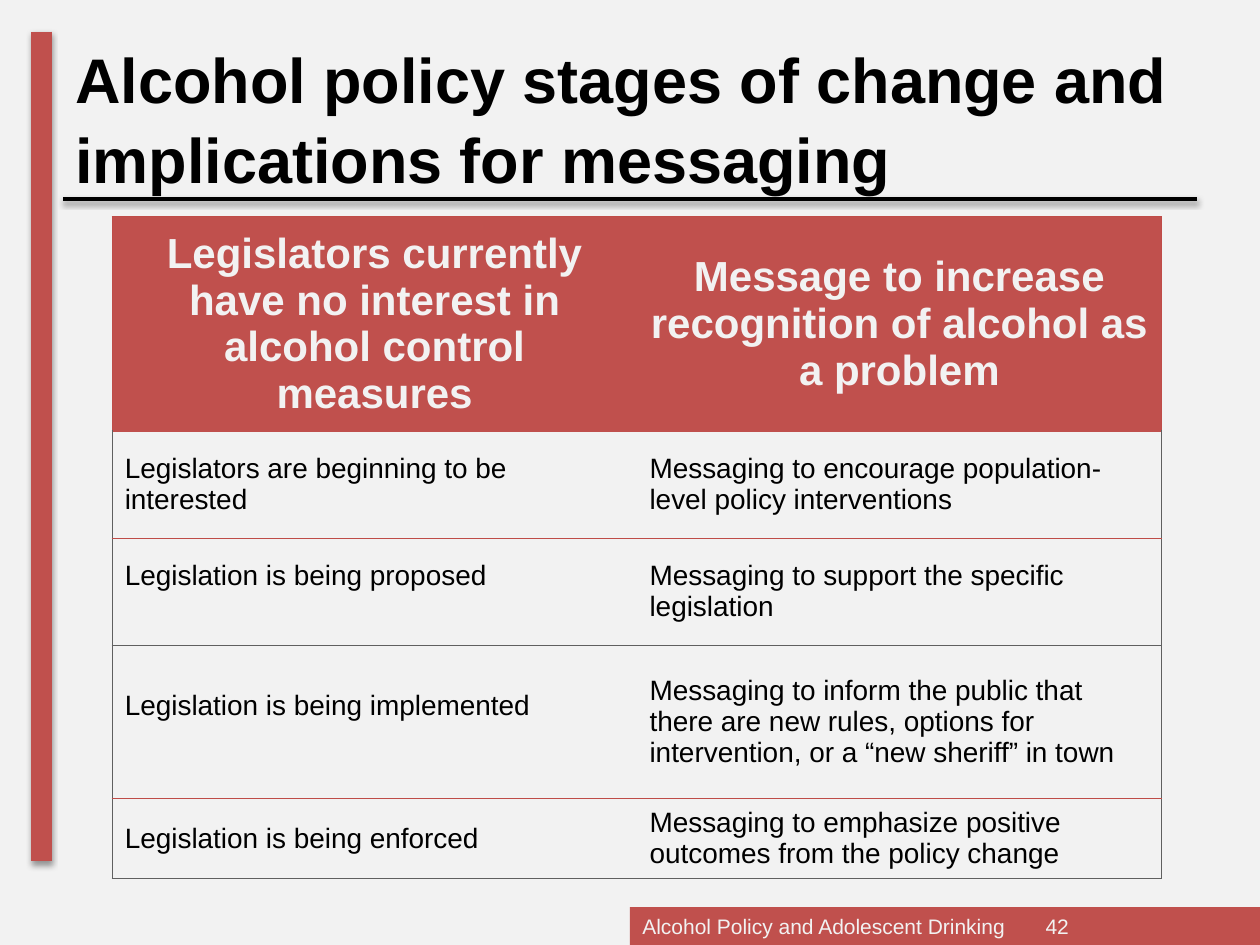
import pptx
import pptx.util
from pptx.dml.color import RGBColor
from pptx.enum.shapes import MSO_CONNECTOR, MSO_SHAPE
from pptx.enum.text import MSO_ANCHOR, PP_ALIGN
from pptx.oxml import parse_xml
from pptx.oxml.ns import nsdecls
from pptx.util import Inches, Pt

RED = RGBColor(0xC0, 0x50, 0x4D)
BORDER_RED = RGBColor(0xBF, 0x4C, 0x48)
GREY = RGBColor(0x60, 0x60, 0x60)
LIGHT = RGBColor(0xF2, 0xF2, 0xF2)
BLACK = RGBColor(0, 0, 0)
FONT = "Arial"

STAGES = [
    ("Legislators currently have no interest in alcohol control measures",
     "Message to increase recognition of alcohol as a problem"),
    ("Legislators are beginning to be interested",
     "Messaging to encourage population-level policy interventions"),
    ("Legislation is being proposed",
     "Messaging to support the specific legislation"),
    ("Legislation is being implemented",
     "Messaging to inform the public that there are new rules, options for "
     "intervention, or a “new sheriff” in town"),
    ("Legislation is being enforced",
     "Messaging to emphasize positive outcomes from the policy change"),
]
ROW_HEIGHTS = [0.83, 0.85, 0.85, 1.22, 0.49]
RULES_BELOW = [RED, BORDER_RED, GREY, BORDER_RED, GREY]
RAISED_CELLS = {(2, 0), (3, 0)}


def add_run(para, text, size, color, bold=False):
    span = para.add_run()
    span.text = text
    span.font.name = FONT
    span.font.size = Pt(size)
    span.font.bold = bold
    span.font.color.rgb = color


def add_rule(page, start, end, color, width):
    """Draw a straight line with a soft shadow below it."""
    rule = page.shapes.add_connector(
        MSO_CONNECTOR.STRAIGHT, *map(Inches, start + end))
    rule.line.color.rgb = color
    rule.line.width = Pt(width)
    rule._element.spPr.append(parse_xml(
        f'<a:effectLst {nsdecls("a")}><a:outerShdw blurRad="40000" dist="20000" '
        'dir="5400000" rotWithShape="0"><a:srgbClr val="000000">'
        '<a:alpha val="38000"/></a:srgbClr></a:outerShdw></a:effectLst>'))


def add_footer(page, left, top, width, height):
    bar = page.shapes.add_shape(
        MSO_SHAPE.RECTANGLE, *map(Inches, (left, top, width, height)))
    bar.shadow.inherit = False
    bar.fill.solid()
    bar.fill.fore_color.rgb = RED
    bar.line.fill.background()
    bar.text_frame.vertical_anchor = MSO_ANCHOR.MIDDLE
    para = bar.text_frame.paragraphs[0]
    para.alignment = PP_ALIGN.LEFT
    para._p.get_or_add_pPr().append(parse_xml(
        f'<a:tabLst {nsdecls("a")}><a:tab pos="{Inches(3.2)}" algn="l"/></a:tabLst>'))
    add_run(para, "Alcohol Policy and Adolescent Drinking\t42", 12, LIGHT)


def add_title(page, left, top, width, height):
    box = page.shapes.add_textbox(*map(Inches, (left, top, width, height)))
    box.text_frame.word_wrap = True
    box.text_frame.vertical_anchor = MSO_ANCHOR.MIDDLE
    para = box.text_frame.paragraphs[0]
    para.line_spacing = 1.05
    add_run(para, "Alcohol policy stages of change and implications for messaging",
            36, BLACK, bold=True)


def set_borders(cell, colors):
    """Set the edges given as a mapping from L, R, T or B to a colour, None for no line."""
    properties = cell._tc.get_or_add_tcPr()
    for position, edge in enumerate("LRTB"):
        color = colors[edge]
        paint = (f'<a:solidFill><a:srgbClr val="{color}"/></a:solidFill>'
                 if color is not None else "<a:noFill/>")
        properties.insert(position, parse_xml(
            f'<a:ln{edge} {nsdecls("a")} w="{Pt(0.75)}">{paint}</a:ln{edge}>'))


def add_stage_table(page, left, top, width, height):
    frame = page.shapes.add_table(
        len(STAGES), 2, *map(Inches, (left, top, width, height)))
    table = frame.table
    table.horz_banding = False
    for row, row_height in zip(table.rows, ROW_HEIGHTS):
        row.height = Inches(row_height)
    for row, texts in enumerate(STAGES):
        header = row == 0
        for column, text in enumerate(texts):
            cell = table.cell(row, column)
            cell.vertical_anchor = MSO_ANCHOR.MIDDLE
            if (row, column) in RAISED_CELLS:
                cell.margin_bottom = Inches(0.3)
            if header:
                cell.fill.solid()
                cell.fill.fore_color.rgb = RED
            else:
                cell.fill.background()
            side = BORDER_RED if header else GREY
            set_borders(cell, {
                "L": side if column == 0 else None,
                "R": side if column == 1 else None,
                "T": BORDER_RED if header else RULES_BELOW[row - 1],
                "B": RULES_BELOW[row],
            })
            para = cell.text_frame.paragraphs[0]
            para.alignment = PP_ALIGN.CENTER if header else PP_ALIGN.LEFT
            add_run(para, text, 24 if header else 16,
                    LIGHT if header else BLACK, bold=header)


def main():
    deck = pptx.Presentation()
    deck.slide_width, deck.slide_height = Inches(10), Inches(7.5)
    page = deck.slides.add_slide(deck.slide_layouts[6])
    page.background.fill.solid()
    page.background.fill.fore_color.rgb = LIGHT
    add_footer(page, 5, 7.2, 5, 0.3)
    add_rule(page, (0.33, 0.25), (0.33, 6.83), RED, 12)
    add_rule(page, (0.5, 1.58), (9.5, 1.58), BLACK, 2)
    add_title(page, 0.5, 0.3, 9, 1.25)
    add_stage_table(page, 0.89, 1.72, 8.33, 5.25)
    deck.save("out.pptx")


if __name__ == "__main__":
    main()
